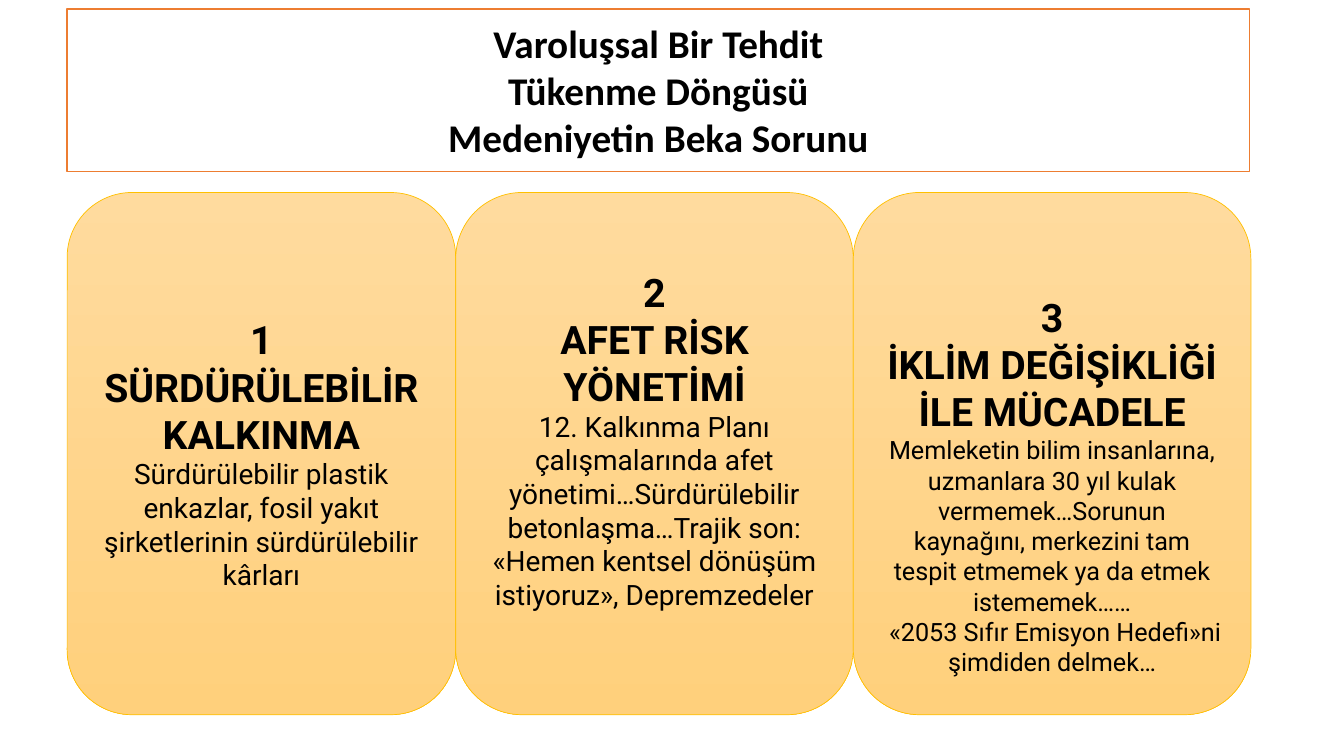
from pptx import Presentation
from pptx.dml.color import RGBColor
from pptx.enum.shapes import MSO_SHAPE
from pptx.enum.text import MSO_ANCHOR, PP_ALIGN
from pptx.util import Pt

RECTANGLE = MSO_SHAPE.RECTANGLE
ROUNDED = MSO_SHAPE.ROUNDED_RECTANGLE
MIDDLE = MSO_ANCHOR.MIDDLE
CENTER = PP_ALIGN.CENTER

WHITE = RGBColor(0xFF, 0xFF, 0xFF)
BLACK = RGBColor(0x00, 0x00, 0x00)
ORANGE = RGBColor(0xED, 0x7D, 0x31)
GOLD = RGBColor(0xFF, 0xC0, 0x00)
SAND_LIGHT = RGBColor(0xFF, 0xDB, 0x9E)
SAND_DARK = RGBColor(0xFF, 0xD0, 0x7C)

LEFT = 48
HEADING_SIZE = 28
INSET = 3.6

TITLE_LINES = ["Varoluşsal Bir Tehdit", "Tükenme Döngüsü", "Medeniyetin Beka Sorunu"]

CARDS = [
    dict(
        width=277.5,
        heading="SÜRDÜRÜLEBİLİR KALKINMA",
        body=["Sürdürülebilir plastik enkazlar, fosil yakıt şirketlerinin sürdürülebilir kârları"],
        size=20,
    ),
    dict(
        width=284,
        heading="AFET RİSK YÖNETİMİ",
        body=[
            "12. Kalkınma Planı çalışmalarında afet yönetimi…Sürdürülebilir betonlaşma…"
            "Trajik son: «Hemen kentsel dönüşüm istiyoruz», Depremzedeler"
        ],
        size=20,
        raised=20,
    ),
    dict(
        width=284,
        heading="İKLİM DEĞİŞİKLİĞİ İLE MÜCADELE",
        body=[
            "Memleketin bilim insanlarına, uzmanlara 30 yıl kulak vermemek…Sorunun "
            "kaynağını, merkezini tam tespit etmemek ya da etmek istememek……",
            " «2053 Sıfır Emisyon Hedefi»ni şimdiden delmek…",
        ],
        size=18,
        lowered=45,
    ),
]


def add_box(page, kind, left, top, width, height, line, line_width):
    box = page.shapes.add_shape(kind, Pt(left), Pt(top), Pt(width), Pt(height))
    box.shadow.inherit = False
    box.line.color.rgb = line
    box.line.width = Pt(line_width)
    box.text_frame.word_wrap = True
    box.text_frame.vertical_anchor = MIDDLE
    return box


def write(box, text, size=HEADING_SIZE, font="Roboto", bold=False):
    frame = box.text_frame
    para = frame.add_paragraph() if frame.text else frame.paragraphs[0]
    para.alignment = CENTER
    span = para.add_run()
    span.text = text
    span.font.name = font
    span.font.size = Pt(size)
    span.font.bold = bold
    span.font.color.rgb = BLACK


def add_title(page):
    box = add_box(page, RECTANGLE, LEFT, 6.5, 844.5, 116, ORANGE, 1)
    box.fill.solid()
    box.fill.fore_color.rgb = WHITE
    for line in TITLE_LINES:
        write(box, line, font="Calibri", bold=True)


def add_card(page, number, left, width, heading, body, size, raised=0, lowered=0):
    box = add_box(page, ROUNDED, left, 137.5, width, 373, GOLD, 0.5)
    box.fill.gradient()
    box.fill.gradient_angle = 270
    for stop, color in zip(box.fill.gradient_stops, (SAND_LIGHT, SAND_DARK)):
        stop.color.rgb = color
    box.text_frame.margin_top = Pt(INSET + lowered)
    box.text_frame.margin_bottom = Pt(INSET + raised)
    write(box, str(number), bold=True)
    write(box, heading, bold=True)
    for text in body:
        write(box, text, size=size)


def main():
    deck = Presentation()
    deck.slide_width = Pt(960)
    deck.slide_height = Pt(540)
    page = deck.slides.add_slide(deck.slide_layouts[6])
    add_title(page)
    left = LEFT
    for number, card in enumerate(CARDS, 1):
        add_card(page, number, left, **card)
        left += card["width"]
    deck.save("out.pptx")


if __name__ == "__main__":
    main()
